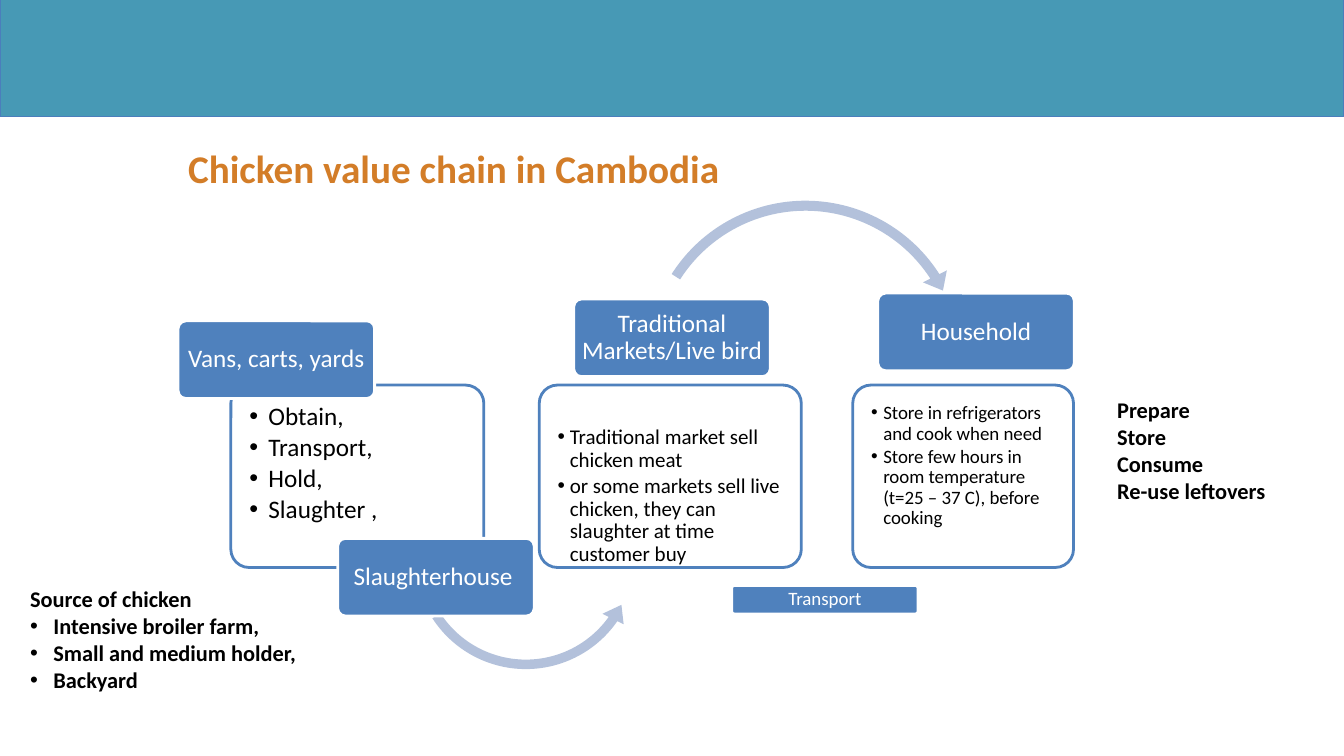
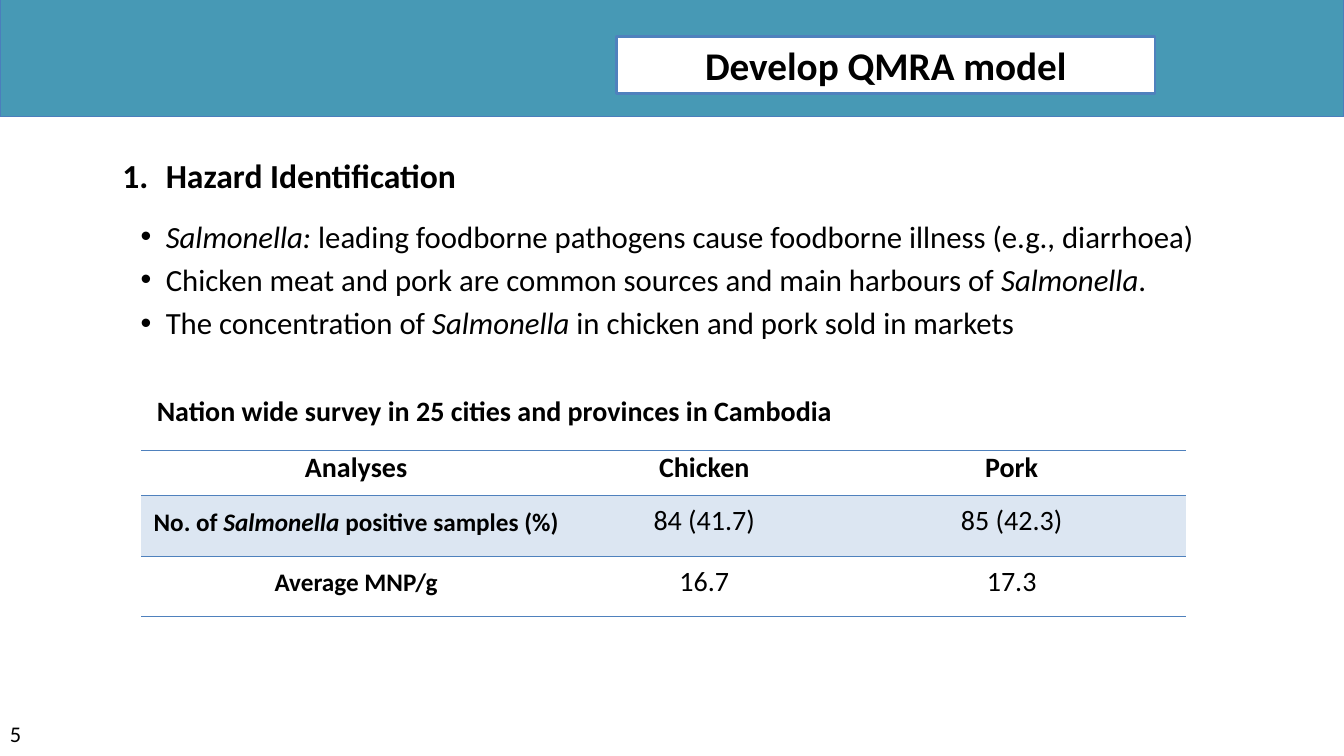
from dataclasses import dataclass
from typing import Optional

from lxml import etree
from pptx import Presentation
from pptx.dml.color import RGBColor
from pptx.enum.shapes import MSO_SHAPE
from pptx.enum.text import MSO_ANCHOR, MSO_AUTO_SIZE, PP_ALIGN
from pptx.oxml.ns import qn
from pptx.util import Inches, Length, Pt

RECTANGLE, ROUNDED = MSO_SHAPE.RECTANGLE, MSO_SHAPE.ROUNDED_RECTANGLE
ARC_OVER, ARC_UNDER = MSO_SHAPE.CIRCULAR_ARROW, MSO_SHAPE.LEFT_CIRCULAR_ARROW
LEFT, CENTER = PP_ALIGN.LEFT, PP_ALIGN.CENTER
TOP, MIDDLE = MSO_ANCHOR.TOP, MSO_ANCHOR.MIDDLE

FONT = "Calibri"
BLACK = RGBColor(0x00, 0x00, 0x00)
WHITE = RGBColor(0xFF, 0xFF, 0xFF)
TEAL = RGBColor(0x47, 0x99, 0xB5)
BAND_EDGE = RGBColor(0x4B, 0x7E, 0xBC)
BLUE = RGBColor(0x4F, 0x81, 0xBD)
PALE_BLUE = RGBColor(0xDC, 0xE6, 0xF2)
ARROW_BLUE = RGBColor(0xB3, 0xC1, 0xDB)
ORANGE = RGBColor(0xD3, 0x7D, 0x28)

COLUMNS, ROWS = 160, 90
TITLE_ONLY = 5
PLAIN_TABLE_STYLE = "{2D5ABB26-0587-4C30-8999-92F81FD0307C}"
DEFAULT_INSETS = (0.1, 0.05, 0.1, 0.05)
NO_INSETS = (0, 0, 0, 0)


def cells(count: float) -> Length:
    """Length of a number of grid cells; cells are square, 12 to the inch."""
    return Inches(count / 12)


@dataclass(frozen=True)
class Area:
    """Place on the slide, in columns and rows of the grid."""
    column: float
    row: float
    columns: float
    rows: float

    def lengths(self) -> tuple:
        return tuple(map(cells, (self.column, self.row, self.columns, self.rows)))


@dataclass(frozen=True)
class Card:
    column: float
    columns: float
    lines: tuple
    size: float
    hanging: float
    top_inset: float = 0.13


@dataclass(frozen=True)
class Label:
    text: str
    column: float
    row: float
    columns: float = 23.4
    rows: float = 9.24
    size: float = 18


@dataclass(frozen=True)
class Arrow:
    kind: MSO_SHAPE
    column: float
    row: float
    extent: float
    adjustments: tuple
    rotation: float = 0


CARDS = (
    Card(27.48, 30.12, ("Obtain,", "Transport,", "Hold,", "Slaughter ,"), 18, 0.19),
    Card(64.2, 31.2, (
        "Traditional market sell chicken meat",
        "or some markets sell live chicken, they can slaughter at time customer buy",
    ), 15, 0.12, 0.36),
    Card(101.52, 26.28, (
        "Store in refrigerators and cook when need",
        "Store few hours in room temperature (t=25 – 37 C), before cooking",
    ), 13.5, 0.12),
)
ARROWS = (
    Arrow(ARC_UNDER, 48.5, 52.3, 28.2, (0.04, 5.32, 21.06, 88.23, 0.05)),
    Arrow(ARC_OVER, 76, 22.9, 39.8, (0.03, 3.66, 200.51, 131.68, 0.04), 353.1),
)
LABELS = (
    Label("Slaughterhouse ", 40.2, 64.1),
    Label("Traditional Markets/Live bird ", 68.3, 35.6),
    Label("Household", 104.5, 34.9),
    Label("Vans, carts, yards", 21.2, 38.2),
    Label("Transport", 87.1, 69.7, 22.2, 3.4, 13.5),
)
SURVEY = (
    ("Analyses", "Chicken", "Pork"),
    ("No. of *Salmonella* positive samples (%)", "84 (41.7)", "85 (42.3)"),
    ("Average MNP/g", "16.7", "17.3"),
)
SURVEY_COLUMNS, SURVEY_ROWS = (51.2, 31.7, 41.5), (5.4, 7.3, 7.1)


def format_paragraph(para, text: str, *, size: float, color: RGBColor = BLACK,
                     bold: bool = False, align=LEFT, bullet: str = "",
                     indent: float = 0, hanging: float = 0, before: float = 0,
                     after: float = 0, spacing=None) -> None:
    """Write text in which asterisks enclose italic words."""
    properties = para._p.get_or_add_pPr()
    properties.set("marL", str(Inches(indent)))
    properties.set("indent", str(-Inches(hanging)))
    para.alignment = align
    para.space_before, para.space_after = Pt(before), Pt(after)
    if spacing is not None:
        para.line_spacing = spacing
    if bullet == "1.":
        etree.SubElement(properties, qn("a:buAutoNum"), type="arabicPeriod")
    elif bullet:
        etree.SubElement(properties, qn("a:buFont"), typeface="Arial")
        etree.SubElement(properties, qn("a:buChar"), char=bullet)
    for index, piece in enumerate(text.split("*")):
        if piece:
            span = para.add_run()
            span.text = piece
            span.font.name, span.font.size = FONT, Pt(size)
            span.font.bold, span.font.italic = bold, index % 2 == 1
            span.font.color.rgb = color


def prepare_frame(frame, *, insets: tuple = DEFAULT_INSETS, anchor=TOP,
                  wrap: bool = True) -> None:
    frame.auto_size = MSO_AUTO_SIZE.NONE
    frame.word_wrap = wrap
    frame.vertical_anchor = anchor
    (frame.margin_left, frame.margin_top,
     frame.margin_right, frame.margin_bottom) = map(Inches, insets)


def append_lines(frame, lines: tuple, **style) -> None:
    for line in lines:
        first = frame.paragraphs[0]
        para = first if not first.runs else frame.add_paragraph()
        format_paragraph(para, line, **style)


def paint(shape, fill: RGBColor, line: Optional[RGBColor] = None,
          width: float = 2) -> None:
    shape.fill.solid()
    shape.fill.fore_color.rgb = fill
    if line is None:
        shape.line.fill.background()
    else:
        shape.line.color.rgb = line
        shape.line.width = Pt(width)


def add_shape(page, kind, area: Area, fill: RGBColor,
              line: Optional[RGBColor] = None, width: float = 2):
    shape = page.shapes.add_shape(kind, *area.lengths())
    shape.shadow.inherit = False
    paint(shape, fill, line, width)
    return shape


def add_text(page, area: Area, lines: tuple, *, insets: tuple = DEFAULT_INSETS,
             wrap: bool = True, **style):
    frame = page.shapes.add_textbox(*area.lengths()).text_frame
    prepare_frame(frame, insets=insets, wrap=wrap)
    append_lines(frame, lines, **style)
    return frame


def set_title(page, area: Area, text: str, **style):
    title = page.shapes.title
    title.left, title.top, title.width, title.height = area.lengths()
    prepare_frame(title.text_frame, anchor=MIDDLE)
    append_lines(title.text_frame, (text,), size=28, bold=True, **style)
    return title


def add_rounded(page, area: Area, fill: RGBColor, line: RGBColor):
    box = add_shape(page, ROUNDED, area, fill, line)
    box.adjustments[0] = 0.1
    return box.text_frame


def add_card(page, card: Card) -> None:
    frame = add_rounded(page, Area(card.column, 45.84, card.columns, 21.72), WHITE, BLUE)
    prepare_frame(frame, insets=(0.13, card.top_inset, 0.13, 0))
    append_lines(frame, card.lines, size=card.size, bullet="•", indent=card.hanging,
                 hanging=card.hanging, spacing=0.9, after=card.size * 0.15)


def add_label(page, label: Label) -> None:
    area = Area(label.column, label.row, label.columns, label.rows)
    frame = add_rounded(page, area, BLUE, WHITE)
    prepare_frame(frame, insets=(0.04, 0.03, 0.04, 0.03), anchor=MIDDLE)
    append_lines(frame, (label.text,), size=label.size, color=WHITE,
                 align=CENTER, spacing=0.9)


def add_arrow(page, arrow: Arrow) -> None:
    area = Area(arrow.column, arrow.row, arrow.extent, arrow.extent)
    shape = add_shape(page, arrow.kind, area, ARROW_BLUE)
    shape.rotation = arrow.rotation
    for index, value in enumerate(arrow.adjustments):
        shape.adjustments[index] = value


def add_border(cell, position: int, side: str) -> None:
    border = etree.Element(qn(f"a:{side}"), w=str(Pt(1)))
    fill = etree.SubElement(border, qn("a:solidFill"))
    etree.SubElement(fill, qn("a:srgbClr"), val=str(BLUE))
    cell._tc.get_or_add_tcPr().insert(position, border)


def add_survey_table(page) -> None:
    area = Area(16.8, 53.6, sum(SURVEY_COLUMNS), sum(SURVEY_ROWS))
    holder = page.shapes.add_table(len(SURVEY), len(SURVEY[0]), *area.lengths())
    table = holder.table
    table.first_row = table.horz_banding = False
    for style in holder.element.iter(qn("a:tableStyleId")):
        style.text = PLAIN_TABLE_STYLE
    for column, width in zip(table.columns, SURVEY_COLUMNS):
        column.width = cells(width)
    for row, height in zip(table.rows, SURVEY_ROWS):
        row.height = cells(height)
    sides = (("lnT", "lnB"), ("lnT",), ("lnB",))
    for row, texts in enumerate(SURVEY):
        for column, text in enumerate(texts):
            cell = table.cell(row, column)
            cell.vertical_anchor = MIDDLE
            cell.margin_left = cell.margin_right = Inches(0.07)
            cell.margin_top = cell.margin_bottom = 0
            if row == 1:
                cell.fill.solid()
                cell.fill.fore_color.rgb = PALE_BLUE
            else:
                cell.fill.background()
            for position, side in enumerate(sides[row]):
                add_border(cell, position, side)
            format_paragraph(cell.text_frame.paragraphs[0], text, align=CENTER,
                             size=18 if row and not column else 20,
                             bold=not row or not column, spacing=Pt(17))


def build_value_chain(page) -> None:
    set_title(page, Area(21.2, 16.5, 78.7, 6.9), "Chicken value chain in Cambodia",
              color=ORANGE)
    for card in CARDS:
        add_card(page, card)
    for arrow in ARROWS:
        add_arrow(page, arrow)
    for label in LABELS:
        add_label(page, label)
    note = dict(size=16, bold=True)
    sources = add_text(page, Area(3.6, 69.7, 29.3, 12.7), ("Source of chicken",),
                       insets=NO_INSETS, wrap=False, **note)
    append_lines(sources, ("Intensive broiler farm,", "Small and medium holder,", "Backyard"),
                 bullet="•", indent=0.23, hanging=0.23, **note)
    add_text(page, Area(133, 47.2, 19.4, 12.7),
             ("Prepare", "Store", "Consume", "Re-use leftovers"),
             insets=NO_INSETS, wrap=False, **note)


def build_hazard(page) -> None:
    title = set_title(page, Area(73.4, 4.3, 64.1, 6.8), "Develop QMRA model", align=CENTER)
    paint(title, WHITE, BLUE)
    body = add_text(page, Area(13.4, 17.8, 134.4, 26), ("Hazard Identification",),
                    size=24, bold=True, bullet="1.", indent=0.43, hanging=0.43, after=12)
    append_lines(body, (
        "*Salmonella: *leading foodborne pathogens cause foodborne illness (e.g., diarrhoea)",
        "Chicken meat and pork are common sources and main harbours of *Salmonella*.",
        "The concentration of *Salmonella* in chicken and pork sold in markets",
    ), size=22, bullet="•", indent=0.43, hanging=0.25, before=4.4)
    add_survey_table(page)
    add_text(page, Area(15.2, 46.2, 96.6, 5.3),
             ("Nation wide survey in 25 cities and provinces in Cambodia",),
             size=20, bold=True, indent=0.19)
    add_text(page, Area(0, 85.2, 10.1, 4.8), ("5",), size=16)


def main() -> None:
    deck = Presentation()
    deck.slide_width, deck.slide_height = cells(COLUMNS), cells(ROWS)
    layout = deck.slide_layouts[TITLE_ONLY]
    pages = [deck.slides.add_slide(layout) for _ in range(2)]
    band = add_shape(pages[0], RECTANGLE, Area(0, 0, COLUMNS, 13.9), TEAL, BAND_EDGE, 0.75)
    layout.shapes.element.insert(2, band.element)  # the layout shows it on every page
    build_value_chain(pages[0])
    build_hazard(pages[1])
    deck.save("out.pptx")


if __name__ == "__main__":
    main()
